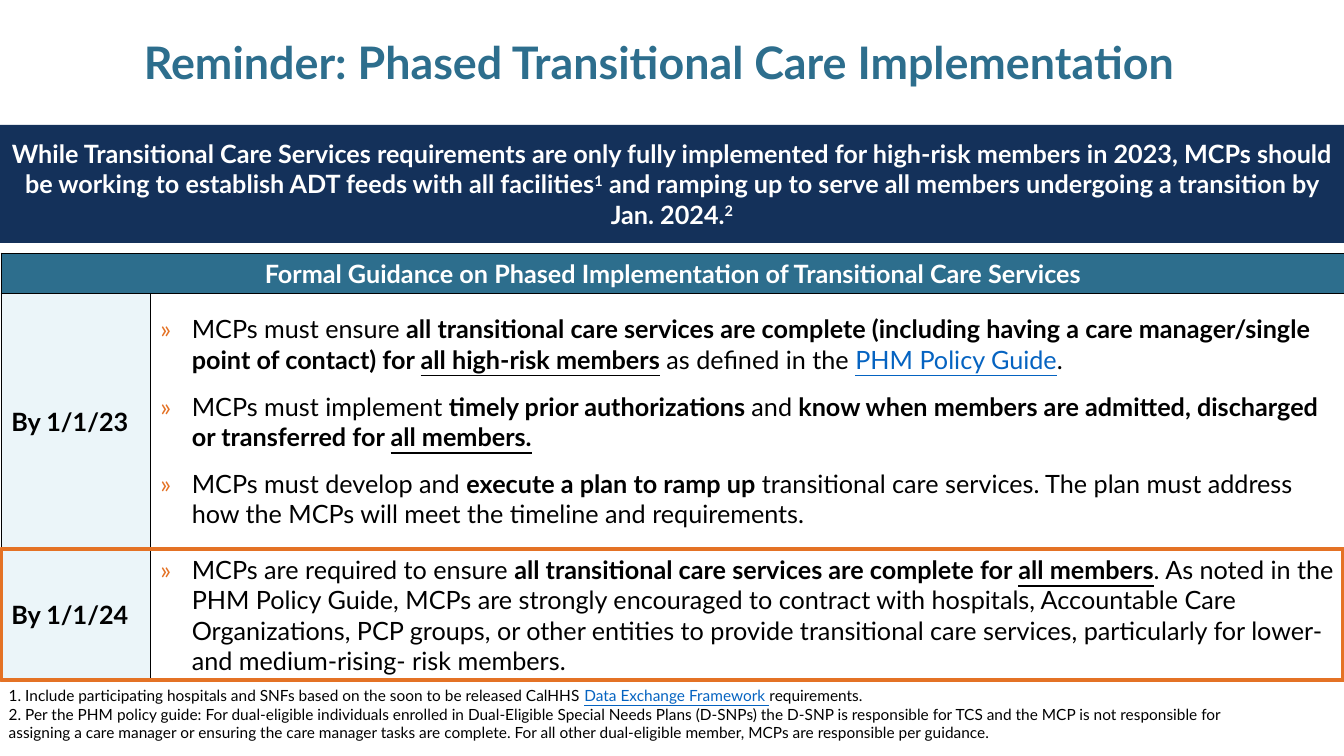
"""Build the slide on phased transitional care implementation."""
import pptx
import pptx.dml.color
import pptx.enum.shapes
import pptx.enum.text
import pptx.oxml
import pptx.oxml.ns
import pptx.util
from pptx.util import Cm

RGBColor = pptx.dml.color.RGBColor
TEAL = RGBColor(0x2D, 0x6E, 0x8D)
NAVY = RGBColor(0x14, 0x31, 0x5A)
PALE = RGBColor(0xEB, 0xF5, 0xF9)
ORANGE = RGBColor(0xE4, 0x72, 0x25)
LINK = RGBColor(0x05, 0x63, 0xC1)
WHITE = RGBColor(0xFF, 0xFF, 0xFF)
BLACK = RGBColor(0, 0, 0)

CENTER = pptx.enum.text.PP_ALIGN.CENTER
MIDDLE = pptx.enum.text.MSO_ANCHOR.MIDDLE
RECTANGLE = pptx.enum.shapes.MSO_SHAPE.RECTANGLE
NS = pptx.oxml.ns.nsdecls("a")

PLAIN = {}
BOLD = {"bold": True}
UNDERLINED = {"bold": True, "underline": True}
LINKED = {"color": LINK, "underline": True}
RAISED = {"baseline": "30000"}


def write(paragraph, pieces, size, color, bold=False, **layout):
    for name, value in layout.items():
        setattr(paragraph, name, value)
    for text, style in pieces:
        run = paragraph.add_run()
        run.text = text
        look = {"name": "Lato", "size": pptx.util.Pt(size), "bold": bold, **style}
        run.font.color.rgb = look.pop("color", color)
        if "baseline" in look:
            run.font._element.set("baseline", look.pop("baseline"))
        for name, value in look.items():
            setattr(run.font, name, value)


def write_bullets(frame, items):
    for index, pieces in enumerate(items):
        paragraph = frame.add_paragraph() if index else frame.paragraphs[0]
        write(paragraph, pieces, 18, BLACK,
              space_before=pptx.util.Pt(6), space_after=pptx.util.Pt(6))
        properties = paragraph._p.get_or_add_pPr()
        properties.set("marL", str(Cm(0.79)))
        properties.set("indent", str(-Cm(0.79)))
        for xml in (f'<a:buClr {NS}><a:srgbClr val="{ORANGE}"/></a:buClr>',
                    f'<a:buFont {NS} typeface="Lato"/>',
                    f'<a:buChar {NS} char="»"/>'):
            properties.append(pptx.oxml.parse_xml(xml))


deck = pptx.Presentation()
deck.slide_width, deck.slide_height = Cm(33.87), Cm(19.05)
slide = deck.slides.add_slide(deck.slide_layouts[5])

title = slide.shapes.title
title.left, title.top, title.width, title.height = Cm(-0.81), Cm(1.02), Cm(35.13), Cm(1.22)
title_format = {"margin_left": 0, "margin_right": 0, "margin_top": 0, "margin_bottom": 0,
                "vertical_anchor": MIDDLE, "word_wrap": True,
                "auto_size": pptx.enum.text.MSO_AUTO_SIZE.NONE}
for name, value in title_format.items():
    setattr(title.text_frame, name, value)
write(title.text_frame.paragraphs[0],
      [("Reminder: Phased Transitional Care Implementation ", PLAIN)],
      32, TEAL, True, alignment=CENTER, line_spacing=0.9)

banner = slide.shapes.add_shape(RECTANGLE, 0, Cm(3.15), Cm(33.87), Cm(2.97))
banner.shadow.inherit = False
banner.fill.solid()
banner.fill.fore_color.rgb = NAVY
banner.line.fill.background()
banner.text_frame.vertical_anchor = MIDDLE
write(banner.text_frame.paragraphs[0], [
    ("While Transitional Care Services requirements are only fully implemented for high-risk "
     "members in 2023, MCPs should be working to establish ADT feeds with all facilities", PLAIN),
    ("1", RAISED),
    (" and ramping up to serve all members undergoing a transition by Jan. 2024.", PLAIN),
    ("2", RAISED)], 18, WHITE, True, alignment=CENTER)

guidance = slide.shapes.add_table(3, 2, Cm(0.03), Cm(6.38), Cm(33.86), Cm(10.77)).table
guidance.first_row = guidance.horz_banding = False
for column, width in zip(guidance.columns, (3.76, 30.1)):
    column.width = Cm(width)
for row, height in zip(guidance.rows, (1.02, 6.45, 3.3)):
    row.height = Cm(height)
guidance.cell(0, 0).merge(guidance.cell(0, 1))
for row, fills in enumerate(((TEAL, TEAL), (PALE, WHITE), (PALE, WHITE))):
    for column, fill in enumerate(fills):
        cell = guidance.cell(row, column)
        cell.vertical_anchor = MIDDLE
        cell.fill.solid()
        cell.fill.fore_color.rgb = fill
        for position, side in enumerate("LRTB"):
            cell._tc.tcPr.insert(position, pptx.oxml.parse_xml(
                f'<a:ln{side} {NS} w="12700"><a:solidFill><a:srgbClr val="{BLACK}"/>'
                f'</a:solidFill></a:ln{side}>'))

write(guidance.cell(0, 0).text_frame.paragraphs[0],
      [("Formal Guidance on Phased Implementation of Transitional Care Services", PLAIN)],
      18, WHITE, True, alignment=CENTER)

phases = [
    ("By 1/1/23", [
        [("MCPs must ensure ", PLAIN),
         ("all transitional care services are complete (including having a care "
          "manager/single point of contact) for ", BOLD),
         ("all high-risk members", UNDERLINED), (" as defined in the ", PLAIN),
         ("PHM Policy Guide", LINKED), (".", PLAIN)],
        [("MCPs must implement ", PLAIN), ("timely prior authorizations ", BOLD),
         ("and", PLAIN),
         (" know when members are admitted, discharged or transferred for ", BOLD),
         ("all members.", UNDERLINED)],
        [("MCPs must develop and ", PLAIN), ("execute a plan to ramp up", BOLD),
         (" transitional care services. The plan must address how the MCPs will meet the "
          "timeline and requirements.", PLAIN)]]),
    ("By 1/1/24", [
        [("MCPs are required to ensure ", PLAIN),
         ("all transitional care services are complete for ", BOLD),
         ("all members", UNDERLINED),
         (". As noted in the PHM Policy Guide, MCPs are strongly encouraged to contract with "
          "hospitals, Accountable Care Organizations, PCP groups, or other entities to provide "
          "transitional care services, particularly for lower- and medium-rising- risk members.",
          PLAIN)]]),
]
for row, (deadline, duties) in enumerate(phases, start=1):
    write(guidance.cell(row, 0).text_frame.paragraphs[0], [(deadline, PLAIN)],
          18, BLACK, True, space_after=pptx.util.Pt(6))
    write_bullets(guidance.cell(row, 1).text_frame, duties)

footnotes = slide.shapes.add_textbox(Cm(-0.03), Cm(17.17), Cm(32.44), Cm(1.68)).text_frame
footnotes.word_wrap = True
write(footnotes.paragraphs[0], [
    ("1. Include participating hospitals and SNFs based on the soon to be released CalHHS ", PLAIN),
    ("Data Exchange Framework ", LINKED), ("requirements.", PLAIN)], 11, BLACK)
write(footnotes.add_paragraph(), [
    ("2. Per the PHM policy guide: For dual-eligible individuals enrolled in Dual-Eligible Special "
     "Needs Plans (D-SNPs) the D-SNP is responsible for TCS and the MCP is not responsible for "
     "assigning a care manager or ensuring the care manager tasks are complete. For all other "
     "dual-eligible member, MCPs are responsible per guidance.", PLAIN)], 11, BLACK)

highlight = slide.shapes.add_shape(RECTANGLE, Cm(0.03), Cm(13.84), Cm(33.83), Cm(3.3))
highlight.shadow.inherit = False
highlight.fill.background()
highlight.line.color.rgb = ORANGE
highlight.line.width = pptx.util.Pt(3)

deck.save("out.pptx")
